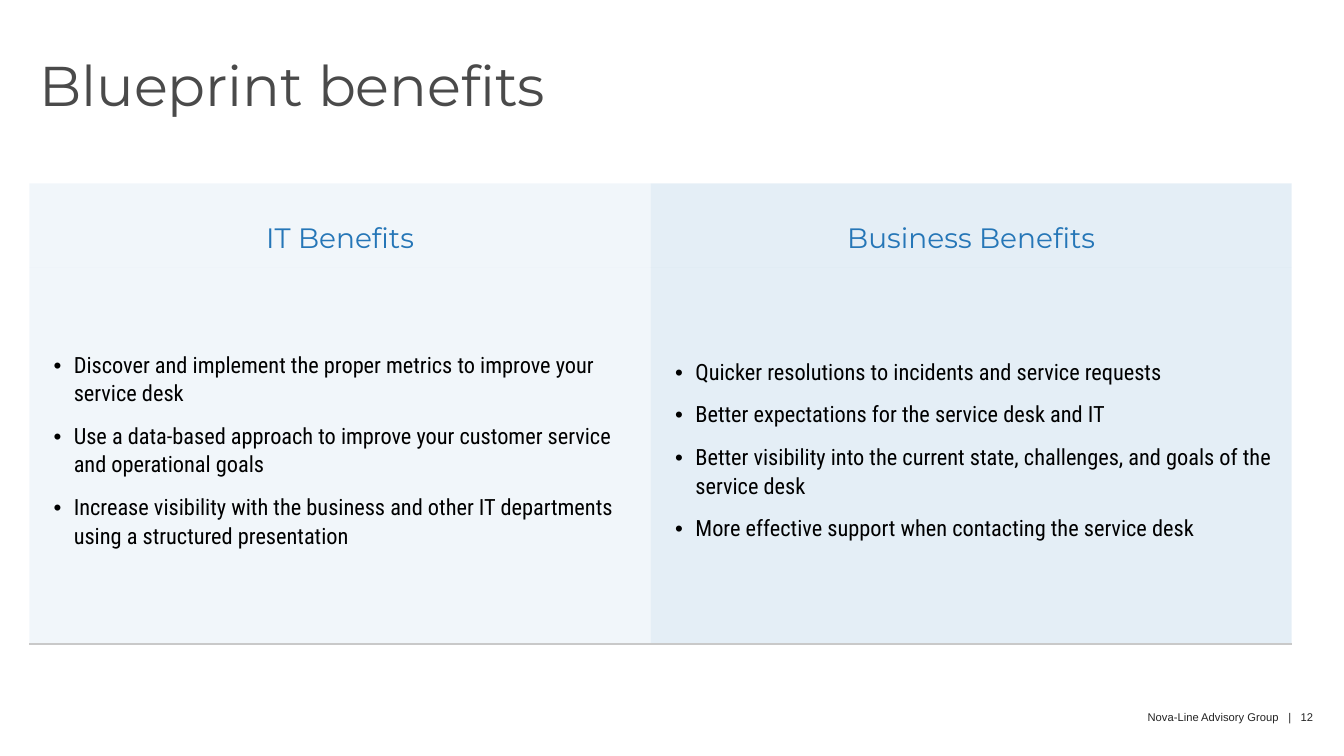
"""Build the slide that sets IT benefits beside business benefits."""
import lxml.etree
import pptx
import pptx.dml.color
import pptx.enum.text
import pptx.oxml.ns
import pptx.util

Cm = pptx.util.Cm
Pt = pptx.util.Pt
ANCHOR = pptx.enum.text.MSO_ANCHOR
ALIGN = pptx.enum.text.PP_ALIGN
qn = pptx.oxml.ns.qn

PLAIN_TABLE_STYLE = "{2D5ABB26-0587-4C30-8999-92F81FD0307C}"
TINT = "7CADD4"
BENEFITS = [
    ("IT Benefits", 15.67, 10, [
        "Discover and implement the proper metrics to improve your service desk",
        "Use a data-based approach to improve your customer service and operational goals",
        "Increase visibility with the business and other IT departments using a structured presentation",
    ]),
    ("Business Benefits", 16.15, 20, [
        "Quicker resolutions to incidents and service requests",
        "Better expectations for the service desk and IT",
        "Better visibility into the current state, challenges, and goals of the service desk",
        "More effective support when contacting the service desk",
    ]),
]


def color(hex_string):
    return pptx.dml.color.RGBColor.from_string(hex_string)


def format_runs(paragraph, name, size, hex_string):
    for run in paragraph.runs:
        run.font.name = name
        run.font.size = Pt(size)
        run.font.color.rgb = color(hex_string)


def set_margins(target, left, top, right, bottom):
    target.margin_left, target.margin_top = Cm(left), Cm(top)
    target.margin_right, target.margin_bottom = Cm(right), Cm(bottom)


def add_title(slide, text):
    title = slide.shapes.title
    title.left, title.top, title.width, title.height = Cm(0.99), Cm(1.47), Cm(23.47), Cm(3.15)
    frame = title.text_frame
    frame.text = text
    frame.word_wrap = True
    frame.auto_size = pptx.enum.text.MSO_AUTO_SIZE.NONE
    frame.vertical_anchor = ANCHOR.TOP
    set_margins(frame, 0, 0, 0, 0)
    paragraph = frame.paragraphs[0]
    paragraph.alignment = ALIGN.LEFT
    paragraph.line_spacing = 0.9
    format_runs(paragraph, "Montserrat", 40, "4A4A4A")


def tint_cell(cell, percent):
    cell.fill.solid()
    cell.fill.fore_color.rgb = color(TINT)
    rgb = cell._tc.tcPr.find(qn("a:solidFill")).find(qn("a:srgbClr"))
    lxml.etree.SubElement(rgb, qn("a:alpha"), val=str(percent * 1000))


def add_bottom_border(cell, hex_string):
    line = lxml.etree.Element(qn("a:lnB"), w=str(Pt(1)))
    fill = lxml.etree.SubElement(line, qn("a:solidFill"))
    lxml.etree.SubElement(fill, qn("a:srgbClr"), val=hex_string)
    cell._tc.get_or_add_tcPr().insert(0, line)


def add_bullet(paragraph):
    properties = paragraph._p.get_or_add_pPr()
    properties.set("marL", str(Cm(0.99)))
    properties.set("indent", str(Cm(-0.51)))
    lxml.etree.SubElement(properties, qn("a:buFont"), typeface="Arial")
    lxml.etree.SubElement(properties, qn("a:buChar"), char="•")


def fill_heading(cell, text, percent):
    cell.text_frame.text = text
    cell.vertical_anchor = ANCHOR.BOTTOM
    set_margins(cell, 0.3, 0.6, 0.3, 0.3)
    paragraph = cell.text_frame.paragraphs[0]
    paragraph.alignment = ALIGN.CENTER
    format_runs(paragraph, "Montserrat", 20, "2576B7")
    tint_cell(cell, percent)


def fill_list(cell, items, percent):
    cell.text_frame.text = "\n".join(items)
    cell.vertical_anchor = ANCHOR.MIDDLE
    set_margins(cell, 0.13, 0.1, 0.3, 0.4)
    for index, paragraph in enumerate(cell.text_frame.paragraphs):
        add_bullet(paragraph)
        paragraph.line_spacing = 1.1
        paragraph.space_before = Pt(10 if index else 0)
        format_runs(paragraph, "Roboto Condensed", 16, "000000")
    tint_cell(cell, percent)
    add_bottom_border(cell, "C9C9C9")


def add_benefits_table(slide):
    width = sum(column_width for _, column_width, _, _ in BENEFITS)
    frame = slide.shapes.add_table(2, len(BENEFITS), Cm(0.74), Cm(4.62), Cm(width), Cm(11.61))
    table = frame.table
    table.first_row = table.horz_banding = False
    table._tbl.tblPr.find(qn("a:tableStyleId")).text = PLAIN_TABLE_STYLE
    table.rows[0].height, table.rows[1].height = Cm(2.11), Cm(9.5)
    for index, (heading, column_width, percent, items) in enumerate(BENEFITS):
        table.columns[index].width = Cm(column_width)
        fill_heading(table.cell(0, index), heading, percent)
        fill_list(table.cell(1, index), items, percent)


def add_footer(slide, owner, number):
    box = slide.shapes.add_textbox(Cm(28.93), Cm(17.91), Cm(4.6), Cm(0.33))
    frame = box.text_frame
    frame.word_wrap = True
    set_margins(frame, 0, 0, 0, 0)
    frame.text = f"{owner}\t|\t{number}"
    paragraph = frame.paragraphs[0]
    tabs = lxml.etree.SubElement(paragraph._p.get_or_add_pPr(), qn("a:tabLst"))
    for position in (3.55, 3.86):
        lxml.etree.SubElement(tabs, qn("a:tab"), pos=str(Cm(position)), algn="l")
    format_runs(paragraph, "Arial", 8, "242424")


def main():
    presentation = pptx.Presentation()
    presentation.slide_width, presentation.slide_height = Cm(33.88), Cm(19.05)
    slide = presentation.slides.add_slide(presentation.slide_layouts[5])
    add_footer(slide, "Nova-Line Advisory Group", 12)
    add_title(slide, "Blueprint benefits")
    add_benefits_table(slide)
    presentation.save("out.pptx")


if __name__ == "__main__":
    main()
